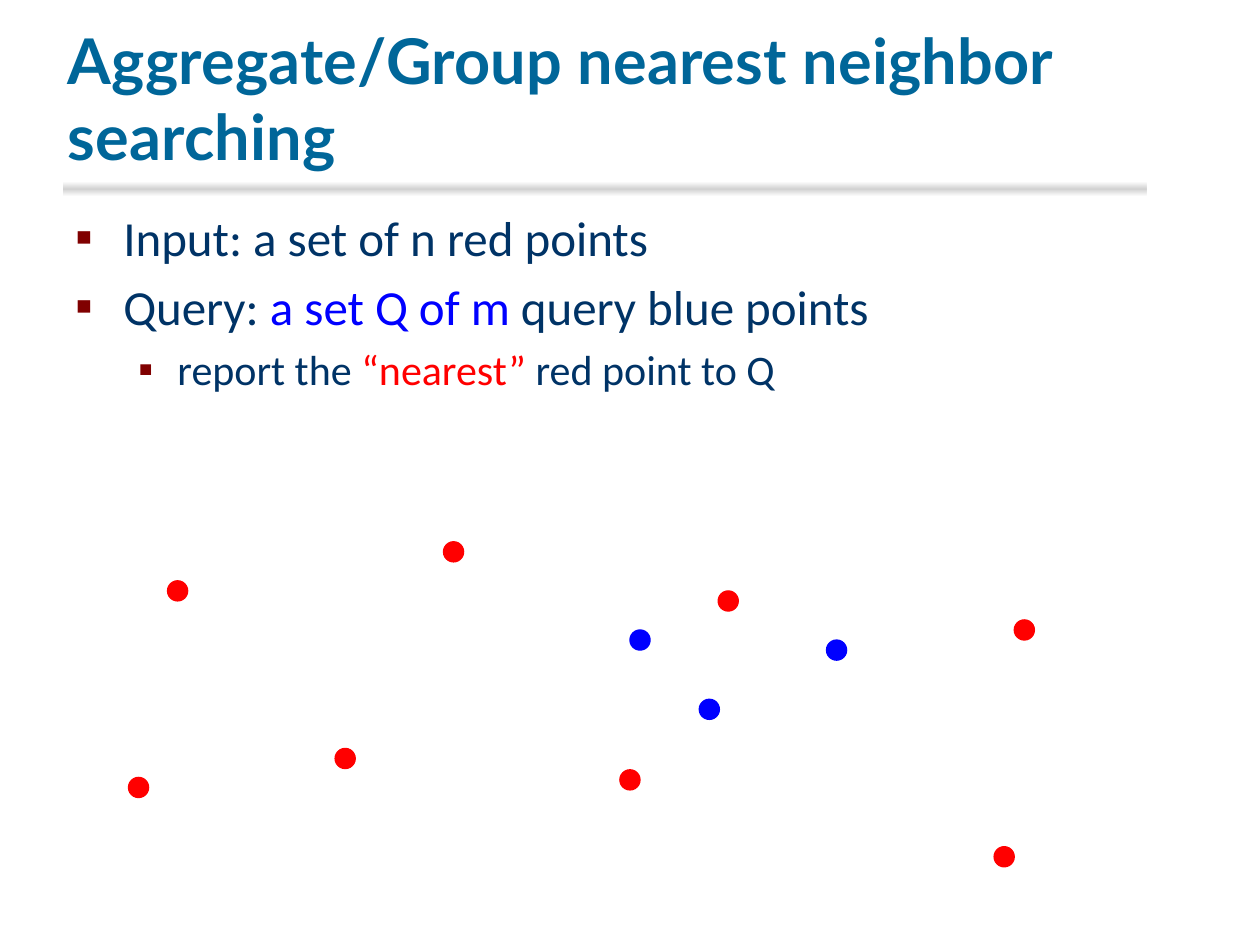
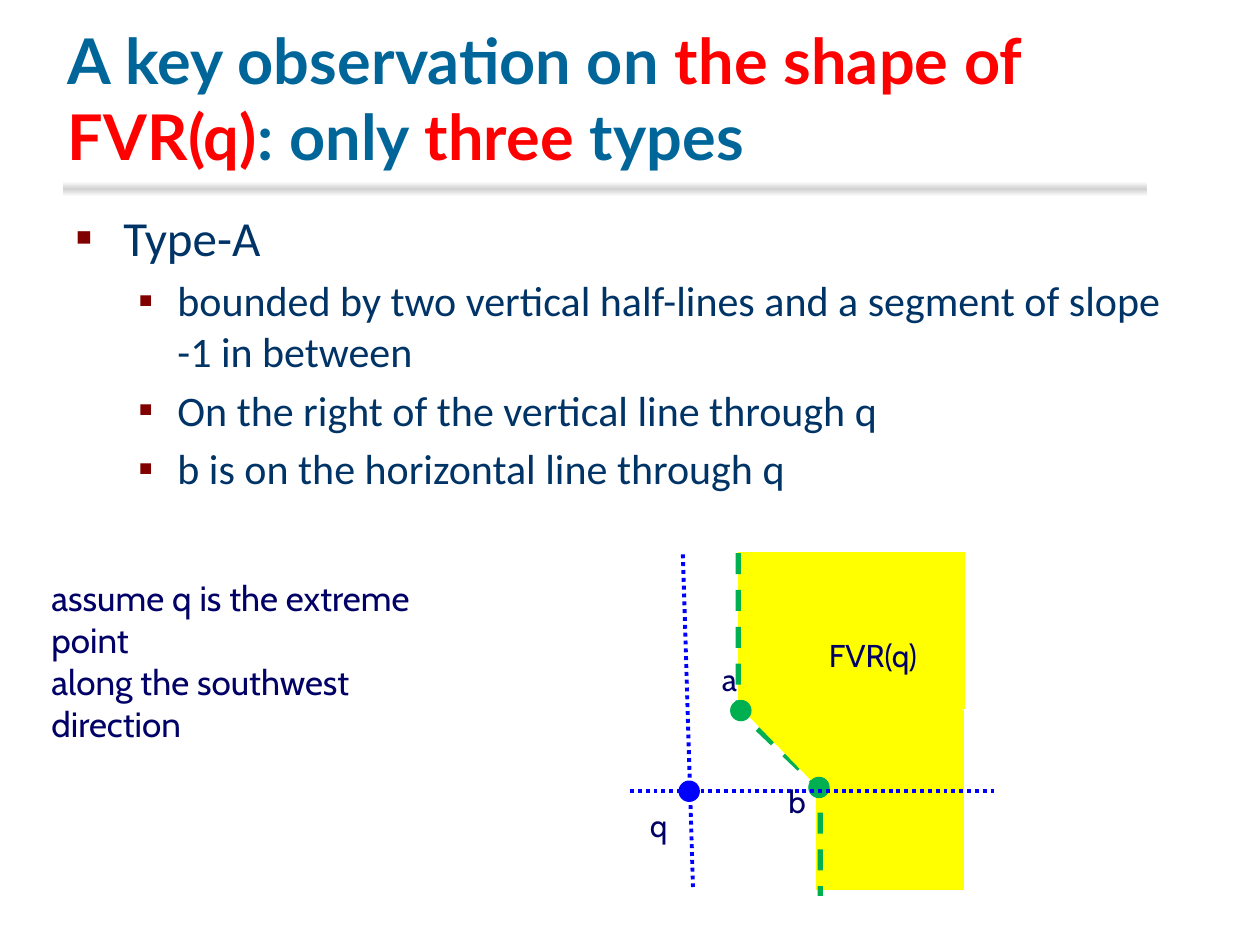
from lxml import etree
from pptx import Presentation, util as u
from pptx.dml.color import RGBColor
from pptx.enum import dml, shapes, text
from pptx.oxml import ns, parse_xml

TEAL = RGBColor(0x00, 0x66, 0x99)
NAVY = RGBColor(0x00, 0x33, 0x66)
INDIGO = RGBColor(0x00, 0x00, 0x66)
MAROON = RGBColor(0x80, 0x00, 0x00)
RED = RGBColor(0xFF, 0x00, 0x00)
BLUE = RGBColor(0x00, 0x00, 0xFF)
GREEN = RGBColor(0x00, 0xB0, 0x50)
YELLOW = RGBColor(0xFF, 0xFF, 0x00)
WHITE = RGBColor(0xFF, 0xFF, 0xFF)
SILVER = RGBColor(0xD2, 0xD2, 0xD2)

DOT = 0.16
TITLE_BOX = (0.44, 0.17, 8.5, 1.25)
RULE_BOX = (0.5, 1.44, 8.6, 0.12)
LEVELS = [(28, 0.38, 0.38), (24, 0.81, 0.31)]


def inches(*lengths):
    return [u.Inches(length) for length in lengths]


def add_run(paragraph, words, font, size, color, bold=False):
    run = paragraph.add_run()
    run.text = words
    run.font.name = font
    run.font.size = u.Pt(size)
    run.font.bold = bold
    run.font.color.rgb = color
    return run


def add_frame(slide, box):
    frame = slide.shapes.add_textbox(*inches(*box)).text_frame
    frame.word_wrap = True
    return frame


def add_rule(slide, box):
    rule = slide.shapes.add_shape(shapes.MSO_SHAPE.RECTANGLE, *inches(*box))
    rule.shadow.inherit = False
    rule.line.fill.background()
    rule.fill.gradient()
    rule.fill.gradient_angle = 90
    stops = rule._element.spPr.find(".//" + ns.qn("a:gsLst"))
    for stop in list(stops):
        stops.remove(stop)
    for position, color in ((0, WHITE), (50000, SILVER), (100000, WHITE)):
        stops.append(parse_xml(
            f'<a:gs {ns.nsdecls("a")} pos="{position}"><a:srgbClr val="{color}"/></a:gs>'))


def add_title(slide, parts):
    add_rule(slide, RULE_BOX)
    frame = add_frame(slide, TITLE_BOX)
    frame.vertical_anchor = text.MSO_ANCHOR.BOTTOM
    for words, color in parts:
        run = add_run(frame.paragraphs[0], words, "Lato", 36, color, bold=True)
        run.font._element.set("spc", "10")


def add_bullets(slide, box, items):
    frame = add_frame(slide, box)
    for index, (level, parts) in enumerate(items):
        paragraph = frame.add_paragraph() if index else frame.paragraphs[0]
        size, margin, hanging = LEVELS[level]
        paragraph.level = level
        paragraph.space_before = u.Pt(size * 0.2)
        properties = paragraph._p.get_or_add_pPr()
        properties.set("marL", str(u.Inches(margin)))
        properties.set("indent", str(-u.Inches(hanging)))
        bullet_color = etree.SubElement(properties, ns.qn("a:buClr"))
        etree.SubElement(bullet_color, ns.qn("a:srgbClr"), val=str(MAROON))
        etree.SubElement(properties, ns.qn("a:buFont"), typeface="Calibri")
        etree.SubElement(properties, ns.qn("a:buChar"), char="▪")
        for words, color in parts:
            add_run(paragraph, words, "Calibri", size, color)


def add_points(slide, origin, offsets, color):
    left, top = origin
    for x, y in offsets:
        point = slide.shapes.add_shape(
            shapes.MSO_SHAPE.OVAL, *inches(left + x, top + y, DOT, DOT))
        point.shadow.inherit = False
        point.fill.solid()
        point.fill.fore_color.rgb = color
        point.line.color.rgb = color
        point.line.width = u.Pt(0.75)


def add_outline(slide, origin, corners, close):
    left, top = origin
    places = [inches(left + x, top + y) for x, y in corners]
    builder = slide.shapes.build_freeform(*places[0], scale=1.0)
    builder.add_line_segments(places[1:], close=close)
    outline = builder.convert_to_shape()
    outline.shadow.inherit = False
    return outline


def add_region(slide, origin, corners):
    region = add_outline(slide, origin, corners, close=True)
    region.fill.solid()
    region.fill.fore_color.rgb = YELLOW
    region.line.fill.background()


def style_line(line, color, width, dash):
    line.color.rgb = color
    line.width = u.Pt(width)
    line.dash_style = dash


def add_axis(slide, origin, start, end):
    left, top = origin
    axis = slide.shapes.add_connector(
        shapes.MSO_CONNECTOR.STRAIGHT,
        *inches(left + start[0], top + start[1], left + end[0], top + end[1]))
    etree.SubElement(axis._element.spPr, ns.qn("a:effectLst"))
    style_line(axis.line, BLUE, 2.25, dml.MSO_LINE.ROUND_DOT)


def add_label(slide, origin, words, x, y, width):
    left, top = origin
    frame = add_frame(slide, (left + x, top + y, width, 0.4))
    frame.word_wrap = False
    frame.auto_size = text.MSO_AUTO_SIZE.SHAPE_TO_FIT_TEXT
    add_run(frame.paragraphs[0], words, "Cabin", 18, INDIGO)


def add_note(slide, box, lines):
    frame = add_frame(slide, box)
    for index, words in enumerate(lines):
        paragraph = frame.add_paragraph() if index else frame.paragraphs[0]
        add_run(paragraph, words, "Cabin", 20, INDIGO)


def draw_point_sets(slide, origin):
    add_points(slide, origin, [
        (0.31, 0.31), (0, 1.87), (2.5, 0), (4.68, 0.39),
        (1.64, 1.64), (3.9, 1.81), (6.87, 2.42), (7.03, 0.62)], RED)
    add_points(slide, origin, [(5.54, 0.78), (3.98, 0.7), (4.53, 1.25)], BLUE)


def draw_type_a(slide, origin):
    add_region(slide, origin, [(1.48, 1.87), (2.65, 1.87), (2.65, 2.68), (1.48, 2.68)])
    add_region(slide, origin, [(0.86, 0), (2.66, 0), (2.66, 1.25), (0.86, 1.25)])
    add_points(slide, origin, [(0.39, 1.82)], BLUE)
    add_label(slide, origin, "q", 0.06, 1.97, 0.33)
    boundary = add_outline(
        slide, origin, [(0.86, 0.01), (0.86, 1.26), (1.51, 1.88), (1.51, 2.73)], close=False)
    boundary.fill.background()
    style_line(boundary.line, GREEN, 3, dml.MSO_LINE.DASH)
    add_region(slide, origin, [(0.87, 1.23), (2.65, 1.25), (2.65, 1.93), (1.5, 1.88)])
    add_points(slide, origin, [(0.8, 1.18), (1.42, 1.79)], GREEN)
    add_axis(slide, origin, (0.42, 0.02), (0.5, 2.66))
    add_axis(slide, origin, (0, 1.9), (2.89, 1.9))
    for label in (("a", 0.63, 0.81, 0.31), ("b", 1.16, 1.78, 0.33), ("FVR(q)", 1.48, 0.62, 0.92)):
        add_label(slide, origin, *label)


def build_search_slide(slide):
    add_title(slide, [("Aggregate/Group nearest neighbor searching", TEAL)])
    add_bullets(slide, (0.5, 1.6, 8.95, 1.76), [
        (0, [("Input: a set of n red points", NAVY)]),
        (0, [("Query: ", NAVY), ("a set Q of m ", BLUE), ("query blue points", NAVY)]),
        (1, [("report the ", NAVY), ("“nearest” ", RED), ("red point to Q", NAVY)])])
    draw_point_sets(slide, (1.02, 4.3))


def build_shape_slide(slide):
    add_title(slide, [
        ("A key observation on ", TEAL), ("the shape of FVR(q)", RED),
        (": only ", TEAL), ("three", RED), (" types", TEAL)])
    add_bullets(slide, (0.5, 1.6, 8.95, 1.6), [
        (0, [("Type-A", NAVY)]),
        (1, [("bounded by two vertical half-lines and a segment of slope -1 in between", NAVY)]),
        (1, [("On the right of the vertical line through q", NAVY)]),
        (1, [("b is on the horizontal line through q", NAVY)])])
    draw_type_a(slide, (5, 4.38))
    add_note(slide, (0.31, 4.53, 3.5, 1.43), [
        "assume q is the extreme point", "along the southwest direction"])


def main():
    deck = Presentation()
    deck.slide_width, deck.slide_height = inches(10, 7.5)
    for build in (build_search_slide, build_shape_slide):
        build(deck.slides.add_slide(deck.slide_layouts[6]))
    deck.save("out.pptx")


if __name__ == "__main__":
    main()
